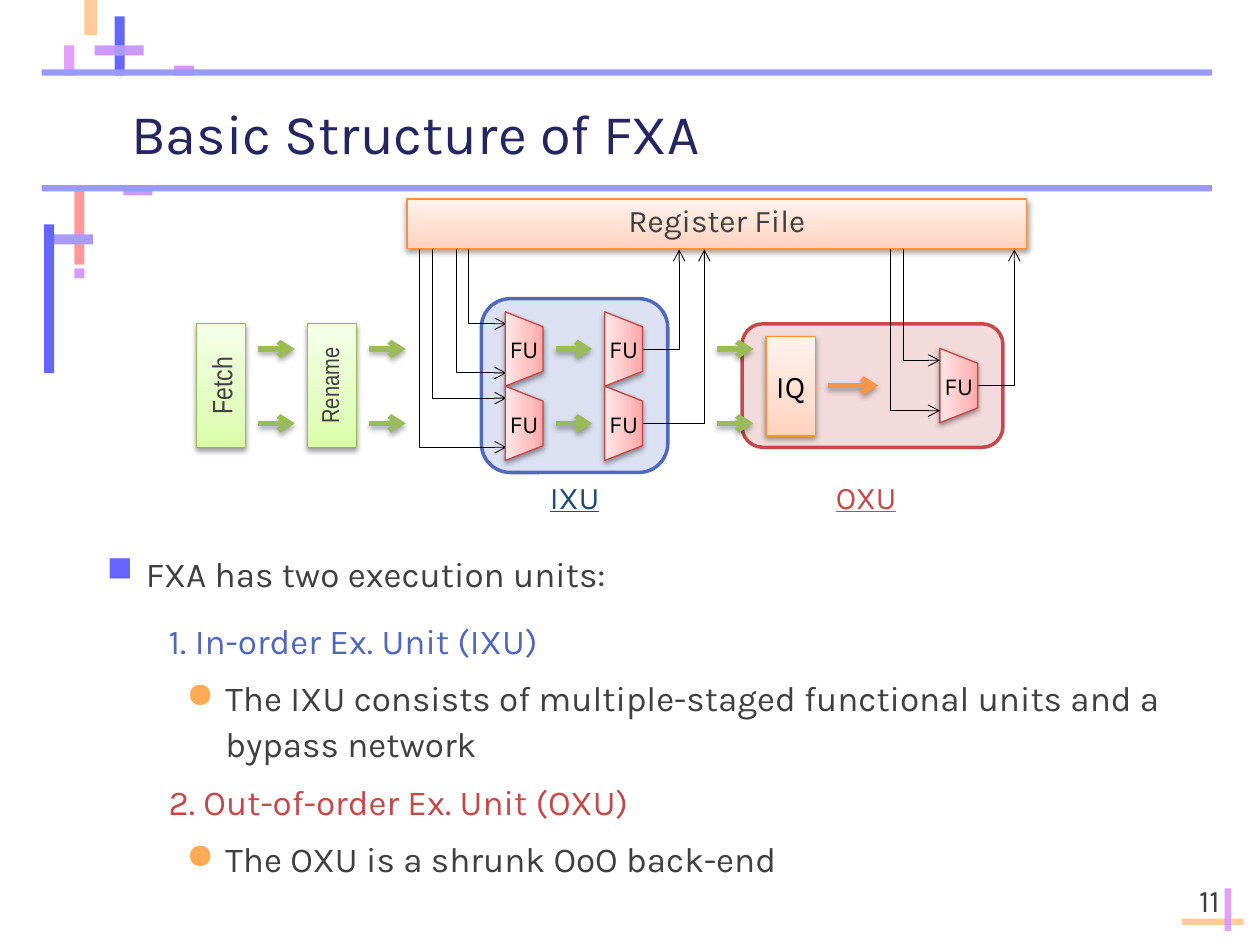
from lxml.etree import SubElement
from pptx import Presentation
from pptx.dml.color import RGBColor
from pptx.enum.shapes import MSO_CONNECTOR, MSO_SHAPE
from pptx.enum.text import MSO_ANCHOR, MSO_AUTO_SIZE, PP_ALIGN
from pptx.oxml.ns import qn
from pptx.util import Inches, Pt

THEME = {
    "font": "Karla", "narrow": "Arial Narrow",
    "title": 32, "body": 20, "label": 18, "stage": 16, "small": 14,
    "navy": "252561", "text": "404040", "black": "000000", "ixu_label": "1F497D",
    "blue": "5168BD", "blue_fill": "DCE1F2", "red": "C44A4A", "red_fill": "F3DBDB",
    "square": "6666FF", "dot": "FDAA57", "green_arrow": "9BBB59", "orange_arrow": "F79646",
    "orange": (("FFD2BD", "FFDED0", "FFF2ED"), "F69240"),
    "green": (("DAFDA7", "E4FCC2", "F5FFE7"), "98B955"),
    "pink": (("FFA6A6", "FFC0C0", "FFE7E7"), "C34545"),
}

TITLE = "Basic Structure of FXA"
PAGE_NUMBER = "11"
LEVELS = [
    {"left": 0.31, "hang": -0.31, "before": 24, "after": 6, "bullet": ("■", "square")},
    {"left": 0.49, "hang": 0, "before": 6, "after": 3, "bullet": None},
    {"left": 0.94, "hang": -0.31, "before": 3, "after": 1, "bullet": ("●", "dot")},
]
BODY = [
    (0, "FXA has two execution units:", "text"),
    (1, "1. In-order Ex. Unit (IXU)", "blue"),
    (2, "The IXU consists of multiple-staged functional units and a bypass network", "text"),
    (1, "2. Out-of-order Ex. Unit (OXU)", "red"),
    (2, "The OXU is a shrunk OoO back-end", "text"),
]
DECORATION = [
    (9.38, 7.29, 0.49, 0.05, "FFCC99"), (9.72, 7.05, 0.05, 0.34, "E69FF9"),
    (9.72, 7.29, 0.05, 0.05, "D39DFB"), (0.98, 1.47, 0.23, 0.08, "CC99FF"),
    (0.59, 1.47, 0.08, 0.63, "FF9999"), (0.43, 1.86, 0.31, 0.08, "A99BFD"),
    (0.59, 2.13, 0.08, 0.08, "D39DFB"), (0.35, 1.78, 0.08, 1.18, "6666FF"),
    (0.33, 1.47, 9.29, 0.05, "9999FF"), (0.91, 0.13, 0.08, 0.47, "6666FF"),
    (1.38, 0.52, 0.16, 0.08, "CC99FF"), (0.75, 0.36, 0.39, 0.08, "CC99FF"),
    (0.91, 0.36, 0.08, 0.08, "A99BFD"), (0.67, 0, 0.1, 0.28, "FFCC99"),
    (0.51, 0.36, 0.08, 0.24, "E69FF9"), (0.33, 0.55, 9.29, 0.05, "9999FF"),
]

REGISTER_BOTTOM = 1.98
LANES = (2.77, 3.36)
OXU_LANE = 3.06
IXU_COLUMNS = (4.16, 4.95)
OXU_COLUMN = 7.61
FU_HEIGHT, FU_DEPTH = 0.59, 0.3
IXU_READS = [(3.72, 2.57), (3.43, 3.16), (3.62, 2.96), (3.33, 3.55)]
OXU_READS = [(7.17, 2.86), (7.07, 3.26)]
IXU_WRITES = list(zip(LANES, (5.39, 5.59)))
ARROW_STARTS = (2.05, 2.93, 4.41, 5.69)
ARROW_LENGTH = 0.29
STAGES = [("Fetch", 1.56, "stage", 1), ("Rename", 2.44, "small", 0.8)]

presentation = Presentation()
presentation.slide_width, presentation.slide_height = Inches(10), Inches(7.5)
slide = presentation.slides.add_slide(presentation.slide_layouts[5])
shapes = slide.shapes


def color(name):
    return RGBColor.from_string(THEME.get(name, name))


def box(at):
    return [Inches(value) for value in at]


def write(paragraph, text, size, ink, font="font", underline=None):
    run = paragraph.add_run()
    run.text = text
    run.font.name, run.font.size = THEME[font], Pt(THEME[size])
    run.font.color.rgb = color(ink)
    run.font.underline = underline


def set_frame(shape, anchor, inset=(0, 0)):
    frame = shape.text_frame
    frame.word_wrap = True
    frame.auto_size = MSO_AUTO_SIZE.NONE
    frame.vertical_anchor = anchor
    frame.margin_left = frame.margin_right = Inches(inset[0])
    frame.margin_top = frame.margin_bottom = Inches(inset[1])
    return frame


def label(shape, text, size, ink, font="font", spacing=None, direction=None, underline=None):
    frame = set_frame(shape, MSO_ANCHOR.MIDDLE)
    if direction:
        frame._txBody.bodyPr.set("vert", direction)
    paragraph = frame.paragraphs[0]
    paragraph.alignment = PP_ALIGN.CENTER
    paragraph.line_spacing = spacing
    write(paragraph, text, size, ink, font, underline)


def add_shadow(effects, opacity, distance):
    shadow = SubElement(effects, qn("a:outerShdw"), blurRad="40000", dist=str(distance),
                        dir="5400000", rotWithShape="0")
    ink = SubElement(shadow, qn("a:srgbClr"), val=THEME["black"])
    SubElement(ink, qn("a:alpha"), val=str(opacity * 1000))


def add_arrowhead(line):
    SubElement(line._get_or_add_ln(), qn("a:tailEnd"), type="arrow")


def add_plain(kind, at, fill, line=None):
    shape = shapes.add_shape(kind, *box(at))
    shape.shadow.inherit = False
    shape.fill.solid()
    shape.fill.fore_color.rgb = color(fill)
    if line:
        shape.line.color.rgb = color(line)
        shape.line.width = Pt(2)
    else:
        shape.line.fill.background()


def add_block(kind, at, palette):
    stops, edge = THEME[palette]
    shape = shapes.add_shape(kind, *box(at))
    shape.fill.gradient()
    shape.fill.gradient_angle = 90
    gradient = shape._element.spPr.find(qn("a:gradFill"))
    stop_list = gradient.find(qn("a:gsLst"))
    for stop in list(stop_list):
        stop_list.remove(stop)
    for position, value in zip((0, 35, 100), stops):
        stop = SubElement(stop_list, qn("a:gs"), pos=str(position * 1000))
        SubElement(stop, qn("a:srgbClr"), val=value)
    gradient.find(qn("a:lin")).set("ang", "16200000")
    shape.line.color.rgb = color(edge)
    shape.line.width = Pt(0.75)
    shape.shadow.inherit = False
    add_shadow(shape._element.spPr.find(qn("a:effectLst")), 38, 20000)
    return shape


def add_functional_unit(center, lane):
    at = (center - FU_HEIGHT / 2, lane - FU_DEPTH / 2, FU_HEIGHT, FU_DEPTH)
    shape = add_block(MSO_SHAPE.FLOWCHART_MANUAL_OPERATION, at, "pink")
    shape.rotation = 270
    label(shape, "FU", "small", "black", direction="vert")


def add_wire(*points):
    start, *rest = [(Inches(x), Inches(y)) for x, y in points]
    builder = shapes.build_freeform(*start)
    builder.add_line_segments(rest, close=False)
    wire = builder.convert_to_shape()
    wire.shadow.inherit = False
    wire.fill.background()
    wire.line.color.rgb = color("black")
    wire.line.width = Pt(0.5)
    add_arrowhead(wire.line)


def add_arrow(left, lane, length, ink):
    arrow = shapes.add_connector(MSO_CONNECTOR.STRAIGHT, *box((left, lane, left + length, lane)))
    arrow.line.color.rgb = color(ink)
    arrow.line.width = Pt(3)
    add_arrowhead(arrow.line)
    add_shadow(SubElement(arrow._element.spPr, qn("a:effectLst")), 35, 23000)


for *at, fill in DECORATION:
    add_plain(MSO_SHAPE.RECTANGLE, at, fill)

title = shapes.title
title.left, title.top, title.width, title.height = box((0.94, 0.6, 9.06, 0.89))
paragraph = set_frame(title, MSO_ANCHOR.MIDDLE, (0.1, 0)).paragraphs[0]
paragraph.alignment = PP_ALIGN.LEFT
write(paragraph, TITLE, "title", "navy")

add_plain(MSO_SHAPE.ROUNDED_RECTANGLE, (5.89, 2.57, 2.07, 0.98), "red_fill", "red")
add_plain(MSO_SHAPE.ROUNDED_RECTANGLE, (3.82, 2.37, 1.48, 1.38), "blue_fill", "blue")
label(add_block(MSO_SHAPE.RECTANGLE, (6.08, 2.67, 0.39, 0.79), "orange"), "IQ", "label", "black")
add_arrow(6.57, OXU_LANE, 0.4, "orange_arrow")
add_functional_unit(OXU_COLUMN, OXU_LANE)

for reads, target in ((IXU_READS, 4.02), (OXU_READS, 7.46)):
    for x, y in reads:
        add_wire((x, REGISTER_BOTTOM), (x, y), (target, y))
for source, lane, x in [(5.1, *write_back) for write_back in IXU_WRITES] + [(7.76, OXU_LANE, 8.05)]:
    add_wire((source, lane), (x, lane), (x, REGISTER_BOTTOM))

register_file = add_block(MSO_SHAPE.RECTANGLE, (3.23, 1.58, 4.92, 0.39), "orange")
label(register_file, "Register File", "label", "text", spacing=0.8)
for name, left, size, spacing in STAGES:
    stage = add_block(MSO_SHAPE.RECTANGLE, (left, 2.57, 0.39, 0.98), "green")
    label(stage, name, size, "text", "narrow", spacing, "vert270")
for lane in LANES:
    for center in IXU_COLUMNS:
        add_functional_unit(center, lane)
    for left in ARROW_STARTS:
        add_arrow(left, lane, ARROW_LENGTH, "green_arrow")

for name, left, width, ink in (("OXU", 5.89, 1.97, "red"), ("IXU", 3.82, 1.48, "ixu_label")):
    caption = shapes.add_textbox(*box((left, 3.75, width, 0.39)))
    label(caption, name, "label", ink, underline=True)

body = shapes.add_textbox(*box((0.75, 4.14, 8.78, 3.05)))
frame = set_frame(body, MSO_ANCHOR.MIDDLE, (0.1, 0.05))
for index, (depth, text, ink) in enumerate(BODY):
    level = LEVELS[depth]
    paragraph = frame.add_paragraph() if index else frame.paragraphs[0]
    paragraph.level = depth
    paragraph.line_spacing = 1.1
    paragraph.space_before, paragraph.space_after = Pt(level["before"]), Pt(level["after"])
    properties = paragraph._p.get_or_add_pPr()
    properties.set("marL", str(Inches(level["left"])))
    properties.set("indent", str(Inches(level["hang"])))
    if level["bullet"]:
        mark, mark_ink = level["bullet"]
        SubElement(SubElement(properties, qn("a:buClr")), qn("a:srgbClr"), val=THEME[mark_ink])
        SubElement(properties, qn("a:buChar"), char=mark)
    write(paragraph, text, "body", ink)

page = shapes.add_textbox(*box((8.99, 6.95, 0.79, 0.39)))
paragraph = set_frame(page, MSO_ANCHOR.BOTTOM, (0.1, 0.05)).paragraphs[0]
paragraph.alignment = PP_ALIGN.RIGHT
write(paragraph, PAGE_NUMBER, "label", "text")

presentation.save("out.pptx")
